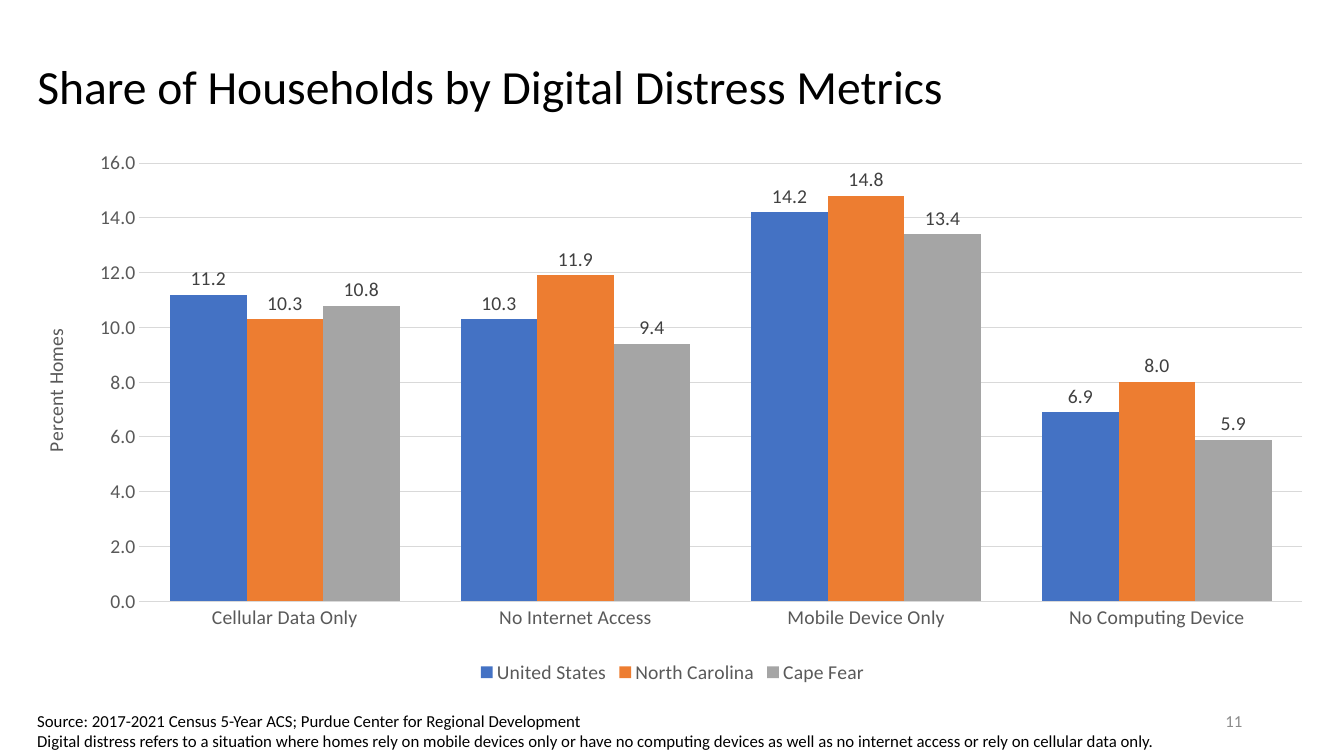
from lxml import etree
from pptx import Presentation
from pptx.chart.data import CategoryChartData
from pptx.dml.color import RGBColor
from pptx.enum.chart import XL_CHART_TYPE, XL_LABEL_POSITION, XL_LEGEND_POSITION, XL_TICK_MARK
from pptx.enum.text import MSO_ANCHOR, PP_ALIGN
from pptx.oxml.ns import qn
from pptx.util import Inches, Pt

COLUMNS = XL_CHART_TYPE.COLUMN_CLUSTERED
OUTSIDE, BOTTOM, NO_TICK = XL_LABEL_POSITION.OUTSIDE_END, XL_LEGEND_POSITION.BOTTOM, XL_TICK_MARK.NONE
LEFT, RIGHT = PP_ALIGN.LEFT, PP_ALIGN.RIGHT
TOP, MIDDLE = MSO_ANCHOR.TOP, MSO_ANCHOR.MIDDLE

BLACK = RGBColor(0x00, 0x00, 0x00)
AXIS_GRAY = RGBColor(0x59, 0x59, 0x59)
LABEL_GRAY = RGBColor(0x40, 0x40, 0x40)
GRID_GRAY = RGBColor(0xD9, 0xD9, 0xD9)
NUMBER_GRAY = RGBColor(0x8C, 0x8C, 0x8C)
BLUE = RGBColor(0x44, 0x72, 0xC4)
ORANGE = RGBColor(0xED, 0x7D, 0x31)
GRAY = RGBColor(0xA5, 0xA5, 0xA5)

W, H = 13.33, 7.5
MARGIN = 0.27
NUMBER_FORMAT = "#,##0.0"
METRICS = ["Cellular Data Only", "No Internet Access", "Mobile Device Only", "No Computing Device"]
REGIONS = [
    ("United States", (11.2, 10.3, 14.2, 6.9), BLUE),
    ("North Carolina", (10.3, 11.9, 14.8, 8.0), ORANGE),
    ("Cape Fear", (10.8, 9.4, 13.4, 5.9), GRAY),
]
PLOT = {"x": 0.087, "y": 0.035, "w": 0.901, "h": 0.805}
SOURCE = (
    "Source: 2017-2021 Census 5-Year ACS; Purdue Center for Regional Development\v"
    "Digital distress refers to a situation where homes rely on mobile devices only or have "
    "no computing devices as well as no internet access or rely on cellular data only."
)


def set_font(font, size, color):
    for name, value in {"name": "Calibri", "size": Pt(size), "bold": False}.items():
        setattr(font, name, value)
    font.color.rgb = color


def set_line(line, color):
    line.color.rgb = color
    line.width = Pt(0.75)


def fill_text(tf, text, size, color, align=LEFT, anchor=TOP, wrap=True):
    for name, value in {"word_wrap": wrap, "vertical_anchor": anchor}.items():
        setattr(tf, name, value)
    p = tf.paragraphs[0]
    p.text = text
    p.alignment = align
    for r in p.runs:
        set_font(r.font, size, color)
    return p


def add_title(s, box):
    title = s.shapes.title
    title.left, title.top, title.width, title.height = map(Inches, box)
    p = fill_text(title.text_frame, "Share of Households by Digital Distress Metrics",
                  34, BLACK, anchor=MIDDLE)
    p.line_spacing = 0.9


def add_text(s, box, text, size, color, **layout):
    tb = s.shapes.add_textbox(*map(Inches, box))
    fill_text(tb.text_frame, text, size, color, **layout)


def place_plot(chart):
    """Fix the inner plot area at shares of the chart's size."""
    plot_area = chart._chartSpace.chart.plotArea
    for old in plot_area.findall(qn("c:layout")):
        plot_area.remove(old)
    layout = etree.Element(qn("c:layout"))
    manual = etree.SubElement(layout, qn("c:manualLayout"))
    settings = {"layoutTarget": "inner", "xMode": "edge", "yMode": "edge", **PLOT}
    for tag, value in settings.items():
        etree.SubElement(manual, qn(f"c:{tag}")).set("val", str(value))
    plot_area.insert(0, layout)


def format_axes(chart):
    cat, val = chart.category_axis, chart.value_axis
    for axis in (cat, val):
        axis.major_tick_mark = axis.minor_tick_mark = NO_TICK
        set_font(axis.tick_labels.font, 14, AXIS_GRAY)
    set_line(cat.format.line, GRID_GRAY)
    scale = {"minimum_scale": 0, "maximum_scale": 16, "major_unit": 2}
    for name, value in scale.items():
        setattr(val, name, value)
    val.format.line.fill.background()
    set_line(val.major_gridlines.format.line, GRID_GRAY)
    val.tick_labels.number_format = NUMBER_FORMAT
    val.tick_labels.number_format_is_linked = False
    p = val.axis_title.text_frame.paragraphs[0]
    r = p.add_run()
    r.text = "Percent Homes"
    set_font(r.font, 14, AXIS_GRAY)


def add_metrics_chart(s, box):
    data = CategoryChartData(number_format=NUMBER_FORMAT)
    data.categories = METRICS
    for name, values, _ in REGIONS:
        data.add_series(name, values)
    chart = s.shapes.add_chart(COLUMNS, *map(Inches, box), data).chart
    set_font(chart.font, 14, BLACK)
    chart.has_title = False
    chart.has_legend = True
    chart.legend.position = BOTTOM
    chart.legend.include_in_layout = False
    set_font(chart.legend.font, 14, AXIS_GRAY)

    # Columns and their value labels
    plot = chart.plots[0]
    plot.gap_width, plot.overlap, plot.vary_by_categories = 80, 0, False
    for series, (_, _, color) in zip(plot.series, REGIONS):
        series.format.fill.solid()
        series.format.fill.fore_color.rgb = color
        series.invert_if_negative = False
        labels = series.data_labels
        label_format = {"show_value": True, "position": OUTSIDE,
                        "number_format": NUMBER_FORMAT, "number_format_is_linked": False}
        for name, value in label_format.items():
            setattr(labels, name, value)
        set_font(labels.font, 14, LABEL_GRAY)

    format_axes(chart)
    place_plot(chart)


def main():
    prs = Presentation()
    prs.slide_width, prs.slide_height = Inches(W), Inches(H)
    s = prs.slides.add_slide(prs.slide_layouts[5])
    add_title(s, (MARGIN, 0.34, 12.76, 1.09))
    # Slide number
    add_text(s, (9.42, 6.95, 3, 0.4), "11", 12, NUMBER_GRAY, align=RIGHT, anchor=MIDDLE)
    add_metrics_chart(s, (MARGIN, 1.43, 12.8, 5.4))
    # Source note along the bottom edge
    add_text(s, (MARGIN, 7, 11.38, 0.5), SOURCE, 12, BLACK, wrap=False)
    prs.save("out.pptx")


if __name__ == "__main__":
    main()
